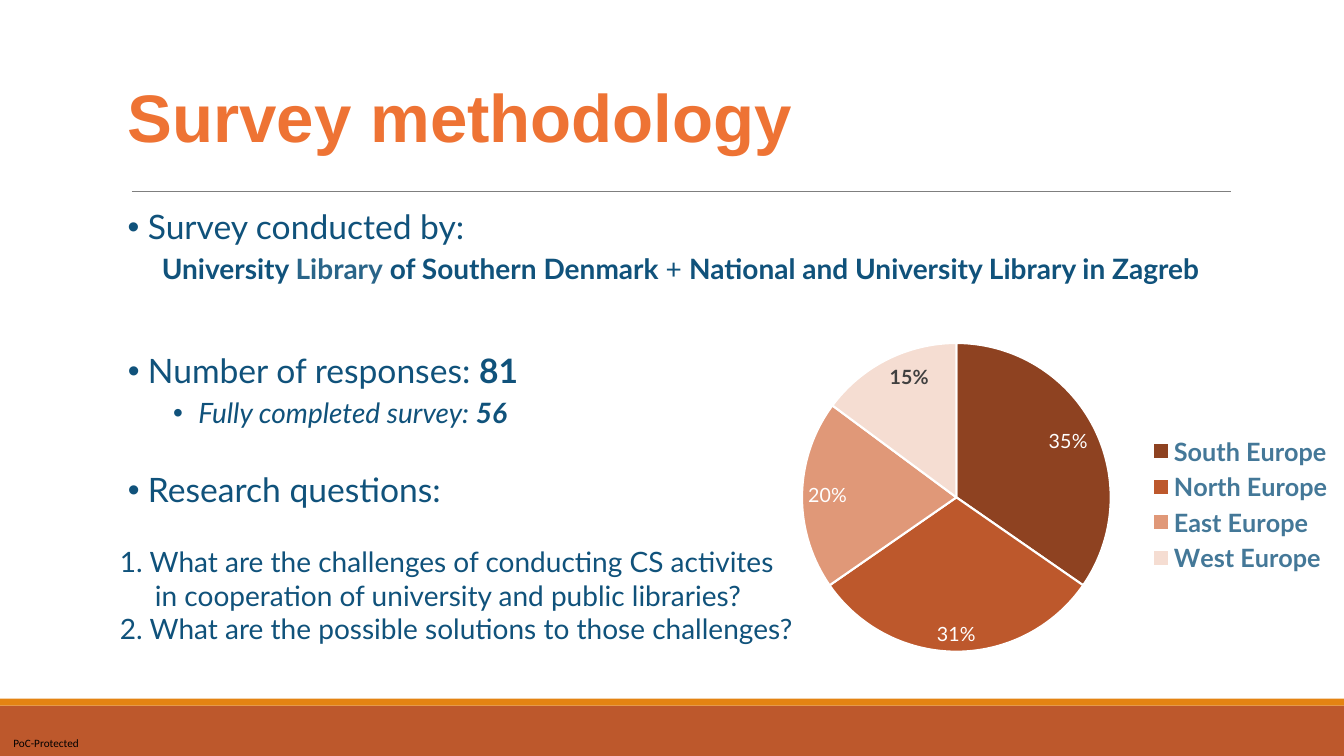
import pptx
import pptx.chart.data
import pptx.dml.color
import pptx.enum.chart
import pptx.enum.shapes
import pptx.enum.text
import pptx.oxml
import pptx.oxml.ns
import pptx.util

Pt = pptx.util.Pt
ANCHOR = pptx.enum.text.MSO_ANCHOR
ALIGN = pptx.enum.text.PP_ALIGN

COLORS = {
    "band": "BD582C", "stripe": "E48312", "rule": "7F7F7F",
    "title": "EE7334", "body": "10527B", "soft": "2A6589",
    "legend": "447898", "label": "404040", "white": "FFFFFF", "black": "000000",
}
# The first row is the heading of the data and has no share
REGIONS = [
    ("Region", None, "E48312"),
    ("South Europe", 0.35, "8E4221"),
    ("North Europe", 0.31, "BD582C"),
    ("East Europe", 0.20, "E09878"),
    ("West Europe", 0.15, "F5DDD2"),
]


def rgb(value):
    return pptx.dml.color.RGBColor.from_string(COLORS.get(value, value))


def set_all(target, formats):
    for name, value in formats.items():
        setattr(target, name, value)


def style_font(font, color, **formats):
    set_all(font, formats)
    font.color.rgb = rgb(color)


def add_box(slide, box, anchor=ANCHOR.TOP, margins=(7.2, 3.6, 7.2, 3.6)):
    frame = slide.shapes.add_textbox(*map(Pt, box)).text_frame
    left, top, right, bottom = map(Pt, margins)
    set_all(frame, {
        "word_wrap": True, "vertical_anchor": anchor, "margin_left": left,
        "margin_top": top, "margin_right": right, "margin_bottom": bottom,
    })
    return frame


def add_paragraph(frame, runs, size, left=0, hanging=0, bullet=False,
                  font="Lato", color="body", **formats):
    """Each run is its text and a dict of what differs from the paragraph."""
    first = frame.paragraphs[0]
    paragraph = frame.add_paragraph() if first.runs else first
    set_all(paragraph, formats)
    properties = paragraph._p.get_or_add_pPr()
    properties.set("marL", str(Pt(left)))
    properties.set("indent", str(Pt(-hanging)))
    if bullet:
        for tag, name, value in (("buFont", "typeface", "Arial"), ("buChar", "char", "•")):
            mark = pptx.oxml.parse_xml(f'<a:{tag} {pptx.oxml.ns.nsdecls("a")}/>')
            mark.set(name, value)
            properties.append(mark)
    for text, changes in runs:
        run = paragraph.add_run()
        run.text = text
        style_font(run.font, **{"name": font, "size": Pt(size), "color": color, **changes})


def add_frame(slide, box):
    left, top, width, height = box
    # Bands along the bottom
    for color, y, depth in (("band", 504, 36), ("stripe", 499, 5)):
        band = slide.shapes.add_shape(
            pptx.enum.shapes.MSO_SHAPE.RECTANGLE, *map(Pt, (left, top + y, width, depth)))
        band.shadow.inherit = False
        band.fill.solid()
        band.fill.fore_color.rgb = rgb(color)
        band.line.fill.background()
    # Rule under the title
    rule = slide.shapes.add_connector(
        pptx.enum.shapes.MSO_CONNECTOR.STRAIGHT,
        *map(Pt, (left + 94.3, top + 136.8, left + 879.1, top + 136.8)))
    rule.line.color.rgb = rgb("rule")
    rule.line.width = Pt(0.75)
    rule._element.spPr.append(
        pptx.oxml.parse_xml(f'<a:effectLst {pptx.oxml.ns.nsdecls("a")}/>'))
    # Protection mark
    mark = add_box(slide, (left, top + height - 18, 66, 18), ANCHOR.MIDDLE, (0, 0, 0, 0))
    add_paragraph(mark, [("PoC-Protected", {})], 8, font="Calibri", color="black",
                  alignment=ALIGN.CENTER)


def add_title(slide, box):
    title = add_box(slide, box, ANCHOR.MIDDLE)
    add_paragraph(title, [("Survey methodology", {"bold": True})], 48,
                  font="Arial", color="title", line_spacing=0.9)


def add_facts(slide, box):
    left, top, width, height = box
    spacing = {"line_spacing": 0.9, "space_after": Pt(6)}
    point = {"size": 24, "left": 14.4, "hanging": 18, "bullet": True, **spacing}
    bold = {"bold": True}
    # Who ran the survey
    conductors = add_box(slide, (left, top, width, 103))
    add_paragraph(conductors, [("Survey conducted by:", {})], **point)
    add_paragraph(conductors, [
        ("University ", bold), ("Library", {"bold": True, "color": "soft"}),
        (" of Southern Denmark ", bold), ("+ ", {}),
        ("National and University Library in Zagreb", bold),
    ], 20, left=24.3, **spacing)
    # Responses and the heading of the questions
    responses = add_box(slide, (left, top + 103, 348, height - 103))
    add_paragraph(responses, [("Number of responses: ", {}), ("81", bold)], **point)
    add_paragraph(responses, [
        ("Fully completed survey: ", {"italic": True}),
        ("56", {"bold": True, "italic": True}),
    ], 20, left=50.4, hanging=18, bullet=True, level=1, **spacing)
    add_paragraph(responses, [("Research questions:", {})],
                  space_before=Pt(25.4), **point)


def add_questions(slide, box):
    questions = add_box(slide, box, ANCHOR.MIDDLE, (0, 3.6, 0, 0))
    for text, left in (
        ("1. What are the challenges of conducting CS activites", 0),
        ("in cooperation of university and public libraries?", 25),
        ("2. What are the possible solutions to those challenges?", 0),
    ):
        add_paragraph(questions, [(text, {})], 20, left=left)


def add_region_pie(slide, box):
    data = pptx.chart.data.CategoryChartData(number_format="0%")
    data.categories = [region for region, _, _ in REGIONS]
    data.add_series("Series 1", [share for _, share, _ in REGIONS])
    chart = slide.shapes.add_chart(
        pptx.enum.chart.XL_CHART_TYPE.PIE, *map(Pt, box), data).chart
    chart.has_title = False
    style_font(chart.font, "black", name="Lato", size=Pt(10))
    # Legend, without the heading row
    chart.has_legend = True
    set_all(chart.legend, {
        "position": pptx.enum.chart.XL_LEGEND_POSITION.RIGHT, "include_in_layout": False})
    style_font(chart.legend.font, "legend", name="Lato", size=Pt(18), bold=True)
    chart.legend._element.find(pptx.oxml.ns.qn("c:legendPos")).addnext(pptx.oxml.parse_xml(
        f'<c:legendEntry {pptx.oxml.ns.nsdecls("c")}>'
        '<c:idx val="0"/><c:delete val="1"/></c:legendEntry>'))
    # Slices
    plot = chart.plots[0]
    plot.vary_by_categories = True
    series = plot.series[0]
    for index, (_, _, color) in enumerate(REGIONS):
        slice_format = series.points[index].format
        slice_format.fill.solid()
        slice_format.fill.fore_color.rgb = rgb(color)
        slice_format.line.color.rgb = rgb("white")
        slice_format.line.width = Pt(1.5)
    # Shares, dark on the palest slice
    inside_end = pptx.enum.chart.XL_LABEL_POSITION.INSIDE_END
    labels = series.data_labels
    set_all(labels, {
        "show_value": True, "show_percentage": False, "number_format": "0%",
        "number_format_is_linked": False, "position": inside_end})
    style_font(labels.font, "white", name="Lato", size=Pt(14))
    palest = series.points[len(REGIONS) - 1].data_label
    style_font(palest.font, "label", name="Lato", size=Pt(14), bold=True)
    palest.position = inside_end
    # Place of the pie within the chart
    area = chart._chartSpace.chart.plotArea
    for old in area.findall(pptx.oxml.ns.qn("c:layout")):
        area.remove(old)
    places = "".join(f'<c:{tag} val="{value}"/>' for tag, value in (
        ("layoutTarget", "inner"), ("xMode", "edge"), ("yMode", "edge"),
        ("x", 0.154), ("y", 0.025), ("w", 0.515), ("h", 0.909)))
    area.insert(0, pptx.oxml.parse_xml(
        f'<c:layout {pptx.oxml.ns.nsdecls("c")}>'
        f'<c:manualLayout>{places}</c:manualLayout></c:layout>'))


def main():
    deck = pptx.Presentation()
    set_all(deck, {"slide_width": Pt(960), "slide_height": Pt(540)})
    slide = deck.slides.add_slide(deck.slide_layouts[6])
    add_frame(slide, (0, 0, 960, 540))
    add_title(slide, (84.2, 28.8, 792, 114.5))
    add_facts(slide, (84.2, 146.9, 792, 324.7))
    add_region_pie(slide, (489.6, 239, 470.4, 242.6))
    add_questions(slide, (85.7, 385.2, 490, 76.3))
    deck.save("out.pptx")


if __name__ == "__main__":
    main()
